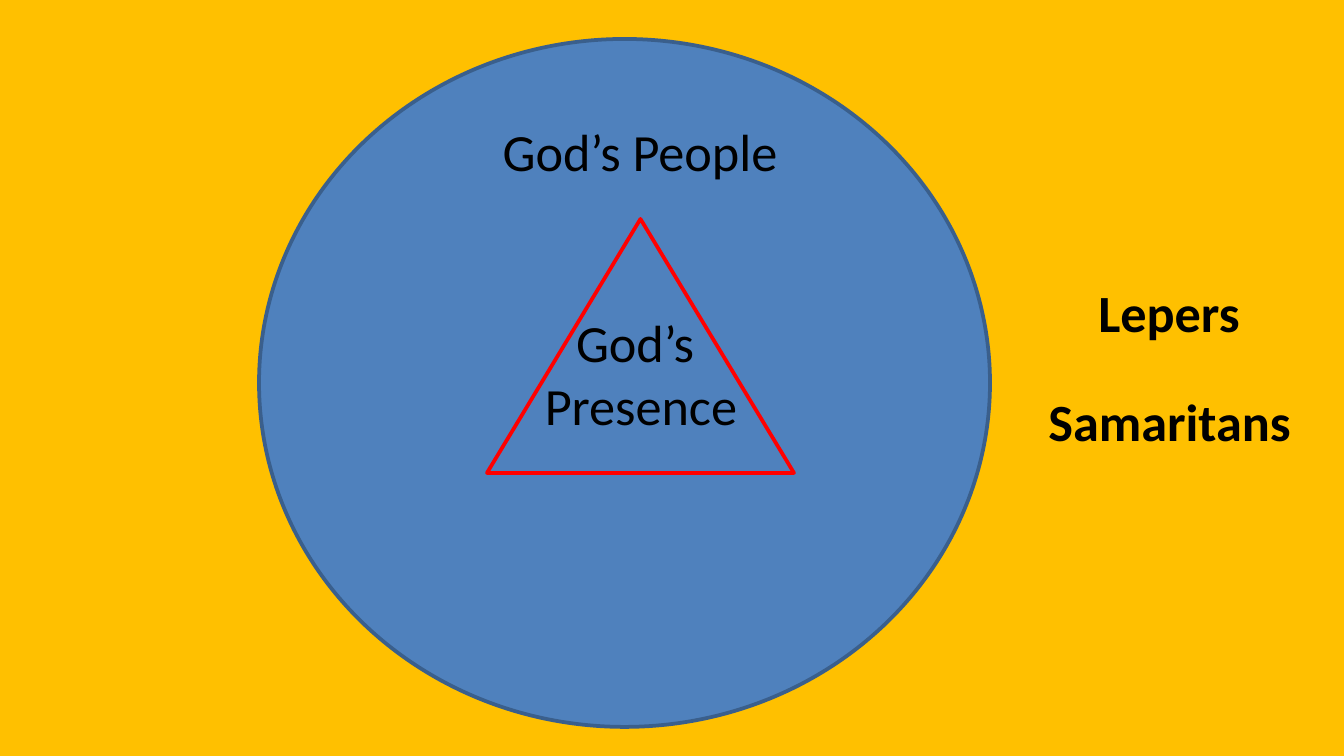
from pptx import Presentation
from pptx.dml.color import RGBColor
from pptx.enum import shapes, text
from pptx.util import Pt

EMU_PER_PX = 914400 / 134.4
GOLD = RGBColor(0xFF, 0xC0, 0x00)
BLUE = RGBColor(0x4F, 0x81, 0xBD)
NAVY = RGBColor(0x3A, 0x5F, 0x8C)
RED = RGBColor(0xFF, 0x00, 0x00)
BLACK = RGBColor(0x00, 0x00, 0x00)

SLIDE_SIZE = (1344, 756)
REGIONS = [
    (shapes.MSO_SHAPE.OVAL, (259, 39, 731, 688), NAVY),
    (shapes.MSO_SHAPE.ISOSCELES_TRIANGLE, (487, 219, 307, 254), RED),
]
LABELS = [
    (["God’s People"], (450, 113, 380, 77), False),
    (["God’s ", "Presence"], (451, 304, 380, 140), False),
    (["Samaritans"], (1032, 383, 275, 77), True),
    (["Lepers"], (1058, 274, 222, 77), True),
]


def emu(lengths):
    return [round(length * EMU_PER_PX) for length in lengths]


def add_region(slide, preset, box, outline):
    region = slide.shapes.add_shape(preset, *emu(box))
    region.shadow.inherit = False
    region.fill.solid()
    region.fill.fore_color.rgb = BLUE
    region.line.color.rgb = outline
    region.line.width = Pt(2)


def add_label(slide, lines, box, bold):
    frame = slide.shapes.add_textbox(*emu(box)).text_frame
    frame.word_wrap = True
    frame.auto_size = text.MSO_AUTO_SIZE.SHAPE_TO_FIT_TEXT
    frame.text = "\n".join(lines)
    for line in frame.paragraphs:
        line.alignment = text.PP_ALIGN.CENTER
        line.font.name = "Calibri"
        line.font.size = Pt(28)
        line.font.bold = bold
        line.font.color.rgb = BLACK


def main():
    deck = Presentation()
    deck.slide_width, deck.slide_height = emu(SLIDE_SIZE)
    slide = deck.slides.add_slide(deck.slide_layouts[6])
    slide.background.fill.solid()
    slide.background.fill.fore_color.rgb = GOLD
    for region in REGIONS:
        add_region(slide, *region)
    for label in LABELS:
        add_label(slide, *label)
    deck.save("out.pptx")


if __name__ == "__main__":
    main()
